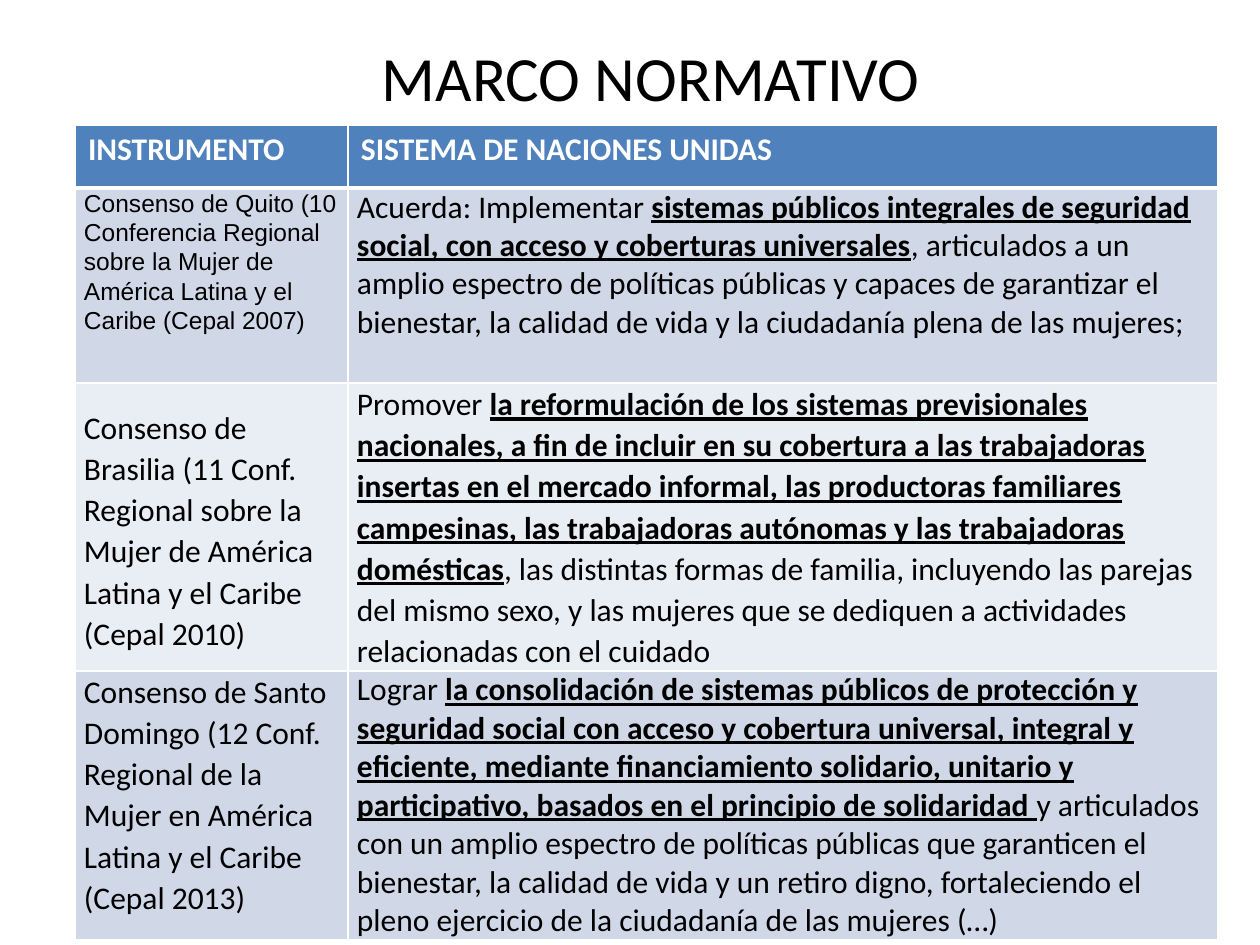
from lxml.etree import SubElement
from pptx import Presentation
from pptx.dml.color import RGBColor
from pptx.enum.text import MSO_ANCHOR, PP_ALIGN
from pptx.oxml.ns import qn
from pptx.util import Emu, Pt

COLORS = {"black": "000000", "white": "FFFFFF", "header": "4F81BD",
          "band_dark": "D0D8E8", "band_light": "E9EDF4"}
BODY_FONT = "Calibri"
LOOSE = 1.07  # line spacing of the looser cells


def px(length):
    return Emu(round(length * 914400 / 126))


class SlideBuilder:
    def __init__(self, slide):
        self.slide = slide

    def add_pieces(self, frame, pieces, size, color="black", font=BODY_FONT,
                   spacing=None, align=PP_ALIGN.LEFT):
        """Fill a frame with one paragraph of (text, emphasis) pieces."""
        paragraph = frame.paragraphs[0]
        paragraph.alignment = align
        if spacing:
            paragraph.line_spacing = spacing
        for text, emphasis in pieces:
            run = paragraph.add_run()
            run.text = text
            run.font.name = font
            run.font.size = Pt(size)
            run.font.bold = "b" in emphasis
            run.font.underline = "u" in emphasis
            run.font.color.rgb = RGBColor.from_string(COLORS[color])

    def title(self, text, left, top, width, height):
        frame = self.slide.shapes.add_textbox(
            px(left), px(top), px(width), px(height)).text_frame
        frame.word_wrap = True
        frame.vertical_anchor = MSO_ANCHOR.MIDDLE
        self.add_pieces(frame, [(text, "")], 36, align=PP_ALIGN.CENTER)

    def table(self, left, top, widths, heights):
        table = self.slide.shapes.add_table(
            len(heights), len(widths), px(left), px(top),
            px(sum(widths)), px(sum(heights))).table
        for column, width in zip(table.columns, widths):
            column.width = px(width)
        for row, height in zip(table.rows, heights):
            row.height = px(height)
        return table

    def cell(self, cell, pieces, fill, margins, borders, size=18, **style):
        cell.margin_left = cell.margin_right = px(margins[0])
        cell.margin_top, cell.margin_bottom = px(margins[1]), px(margins[2])
        self.borders(cell, borders)
        cell.fill.solid()
        cell.fill.fore_color.rgb = RGBColor.from_string(COLORS[fill])
        self.add_pieces(cell.text_frame, pieces, size, **style)

    def borders(self, cell, widths):
        properties = cell._tc.get_or_add_tcPr()
        for side, width in zip("LRTB", widths):
            line = SubElement(properties, qn(f"a:ln{side}"), w=str(Pt(width)))
            paint = SubElement(line, qn("a:solidFill"))
            SubElement(paint, qn("a:srgbClr"), val=COLORS["white"])


HEADINGS = ["INSTRUMENTO", "SISTEMA DE NACIONES UNIDAS"]

# Each row: instrument, its style, its top margin, agreement, its style
AGREEMENTS = [
    ("Consenso de Quito (10 Conferencia Regional sobre la Mujer de América "
     "Latina y el Caribe (Cepal 2007)",
     {"size": 14, "font": "Arial", "spacing": LOOSE}, 0,
     [("Acuerda: Implementar ", ""),
      ("sistemas públicos integrales de seguridad social, con acceso y "
       "coberturas universales", "bu"),
      (", articulados a un amplio espectro de políticas públicas y capaces de "
       "garantizar el bienestar, la calidad de vida y la ciudadanía plena de "
       "las mujeres;", "")], {}),
    ("Consenso de Brasilia (11 Conf. Regional sobre la Mujer de América "
     "Latina y el Caribe (Cepal 2010)", {"spacing": LOOSE}, 24,
     [("Promover ", ""),
      ("la reformulación de los sistemas previsionales nacionales, a fin de "
       "incluir en su cobertura a las trabajadoras insertas en el mercado "
       "informal, las productoras familiares campesinas, las trabajadoras "
       "autónomas y las trabajadoras domésticas", "bu"),
      (", las distintas formas de familia, incluyendo las parejas del mismo "
       "sexo, y las mujeres que se dediquen a actividades relacionadas con el "
       "cuidado", "")], {"spacing": LOOSE}),
    ("Consenso de Santo Domingo (12 Conf. Regional de la Mujer en América "
     "Latina y el Caribe (Cepal 2013)", {"spacing": LOOSE}, 0,
     [("Lograr ", ""),
      ("la consolidación de sistemas públicos de protección y seguridad "
       "social con acceso y cobertura universal, integral y eficiente, "
       "mediante financiamiento solidario, unitario y participativo, basados "
       "en el principio de solidaridad ", "bu"),
      ("y articulados con un amplio espectro de políticas públicas que "
       "garanticen el bienestar, la calidad de vida y un retiro digno, "
       "fortaleciendo el pleno ejercicio de la ciudadanía de las mujeres (…)",
       "")], {}),
]


def main():
    presentation = Presentation()
    presentation.slide_width, presentation.slide_height = px(1260), px(945)
    builder = SlideBuilder(
        presentation.slides.add_slide(presentation.slide_layouts[6]))

    # Title
    builder.title("MARCO NORMATIVO", 84, 26, 1134, 100)

    # Table header
    table = builder.table(75, 125, [273, 870], [63, 195, 288, 269])
    for column, heading in enumerate(HEADINGS):
        builder.cell(table.cell(0, column), [(heading, "b")], "header",
                     (13, 6, 6), (1, 1, 1, 3), color="white")

    # Table body, in alternating bands
    for row, (instrument, instrument_style, top, agreement,
              agreement_style) in enumerate(AGREEMENTS, start=1):
        band = "band_dark" if row % 2 else "band_light"
        borders = (1, 1, 3 if row == 1 else 1, 1)
        builder.cell(table.cell(row, 0), [(instrument, "")], band,
                     (9, top, 0), borders, **instrument_style)
        builder.cell(table.cell(row, 1), agreement, band,
                     (9, 0, 0), borders, **agreement_style)

    presentation.save("out.pptx")


if __name__ == "__main__":
    main()
